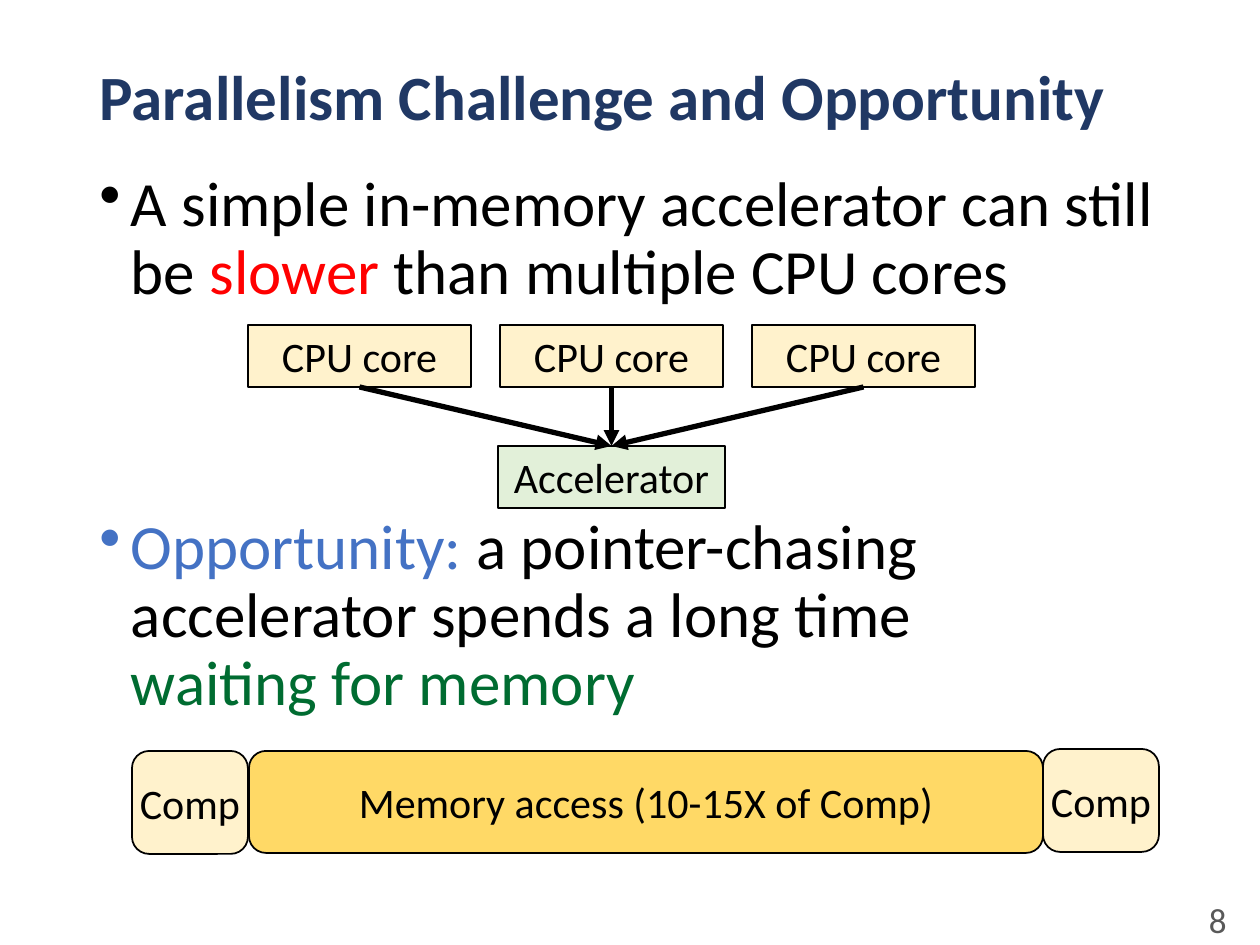
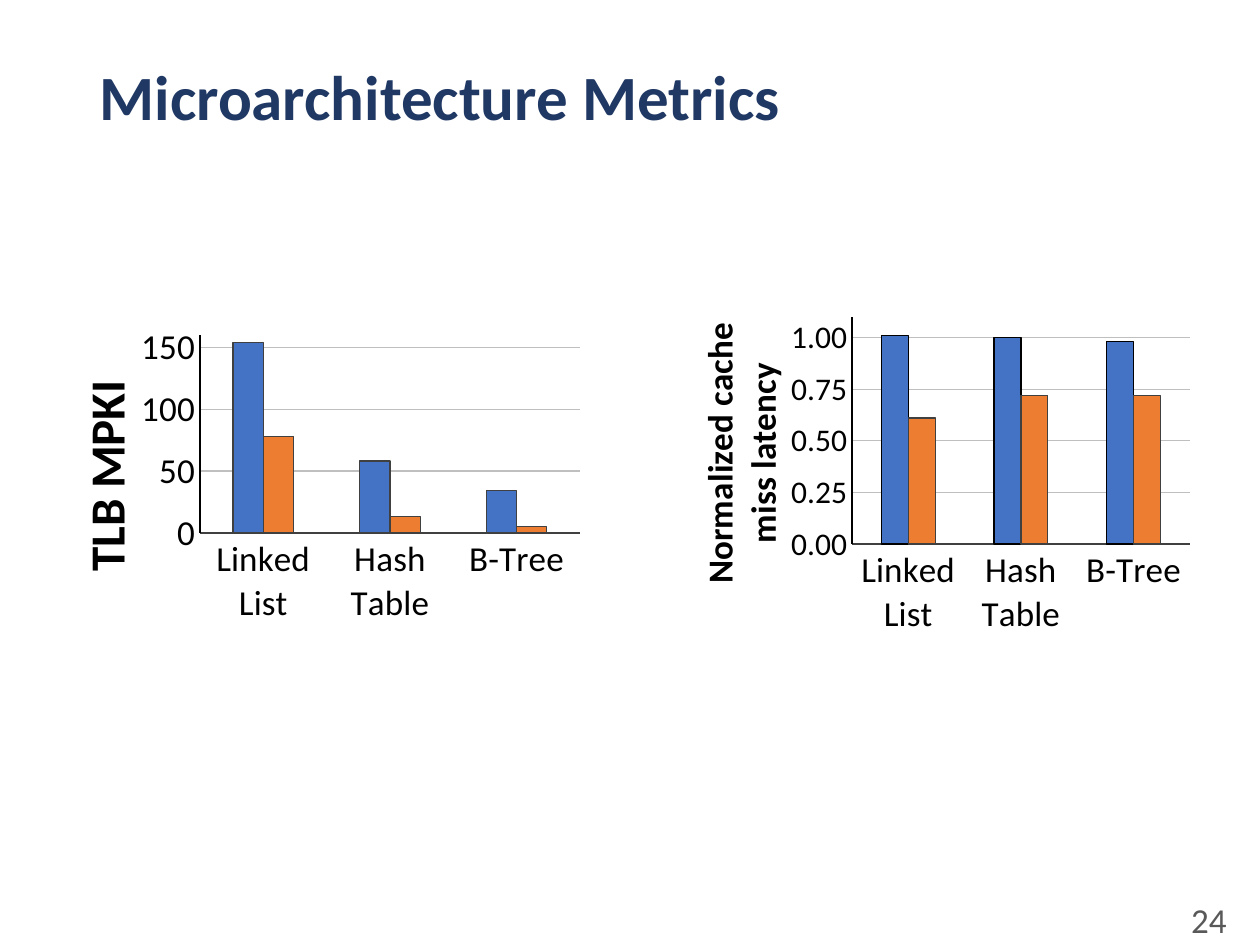
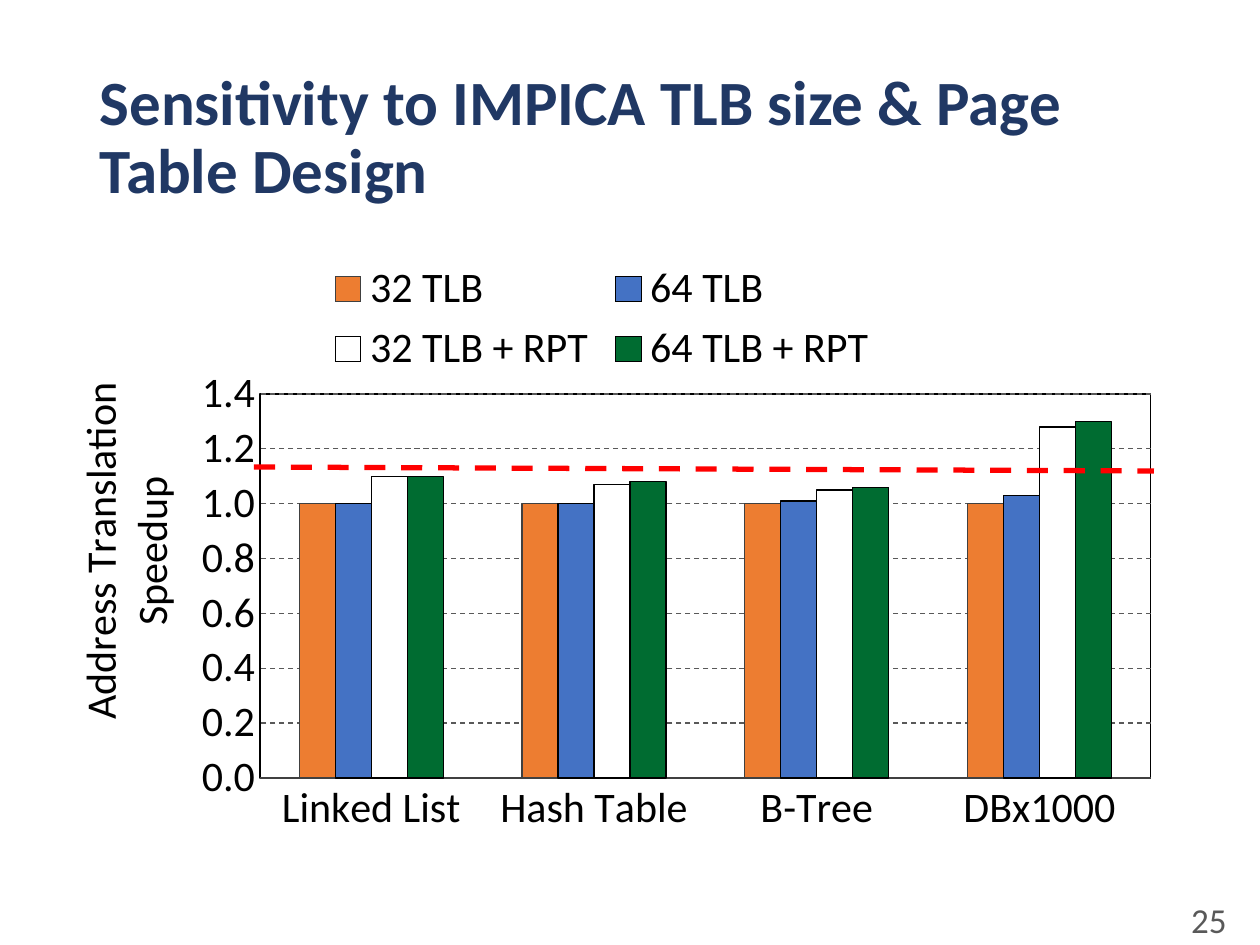
from pptx import Presentation
from pptx.chart.data import CategoryChartData
from pptx.dml.color import RGBColor
from pptx.enum.chart import XL_CHART_TYPE, XL_LEGEND_POSITION, XL_TICK_MARK
from pptx.enum.dml import MSO_LINE
from pptx.enum.shapes import MSO_CONNECTOR, MSO_SHAPE
from pptx.enum.text import MSO_ANCHOR, MSO_AUTO_SIZE, PP_ALIGN
from pptx.oxml import parse_xml
from pptx.oxml.ns import nsdecls, qn
from pptx.oxml.xmlchemy import OxmlElement
from pptx.util import Emu, Pt

RECTANGLE, ROUNDED = MSO_SHAPE.RECTANGLE, MSO_SHAPE.ROUNDED_RECTANGLE
STRAIGHT = MSO_CONNECTOR.STRAIGHT
LEFT, CENTER, RIGHT = PP_ALIGN.LEFT, PP_ALIGN.CENTER, PP_ALIGN.RIGHT
TOP, MIDDLE = MSO_ANCHOR.TOP, MSO_ANCHOR.MIDDLE
NO_AUTOFIT = MSO_AUTO_SIZE.NONE
DASH = MSO_LINE.DASH
COLUMNS = XL_CHART_TYPE.COLUMN_CLUSTERED
LEGEND_TOP = XL_LEGEND_POSITION.TOP
NO_TICK = XL_TICK_MARK.NONE

EMU_PER_PX = 914400 / 126
SLIDE_WIDTH, SLIDE_HEIGHT = 1260, 945
TITLE_LAYOUT = 5
FONT = "Calibri"
BLACK, WHITE, RED = "000000", "FFFFFF", "FF0000"
NAVY, BLUE, ORANGE, GREEN = "203864", "4472C4", "ED7D31", "006C31"
CREAM, GOLD, MINT = "FFF2CC", "FFD966", "E2F0D9"
DARK_GRAY, GRAY, LIGHT_GRAY = "404040", "595959", "BFBFBF"
STRUCTURES = ["Linked List", "Hash Table", "B-Tree"]
BOTTOM_SITE, TOP_SITE = 2, 0


def px(length):
    return Emu(round(length * EMU_PER_PX))


def place(left, top, width, height):
    return px(left), px(top), px(width), px(height)


def rgb(value):
    return RGBColor.from_string(value)


def style_font(font, size, color=BLACK, bold=False):
    font.name = FONT
    font.size = Pt(size)
    font.bold = bold
    font.color.rgb = rgb(color)


def style_line(line, color, width=0.75, dash=None):
    line.color.rgb = rgb(color)
    line.width = Pt(width)
    if dash is not None:
        line.dash_style = dash


def write(paragraph, text, size=24, color=BLACK, bold=False, align=LEFT,
          spacing=None, before=0, bullet=False):
    paragraph.alignment = align
    paragraph.space_before = Pt(before)
    if spacing:
        paragraph.line_spacing = spacing
    if bullet:
        properties = paragraph._p.get_or_add_pPr()
        properties.set("marL", "228600")
        properties.set("indent", "-228600")
        mark = OxmlElement("a:buChar")
        mark.set("char", "•")
        properties.append(mark)
    pieces = [(text, color)] if isinstance(text, str) else text
    for words, run_color in pieces:
        if words == "\n":
            paragraph.add_line_break()
            continue
        run = paragraph.add_run()
        run.text = words
        style_font(run.font, size, run_color, bold)


def prepare_frame(shape, anchor=MIDDLE):
    frame = shape.text_frame
    frame.word_wrap = True
    frame.auto_size = NO_AUTOFIT
    frame.vertical_anchor = anchor
    return frame


def add_slide(presentation, title, number, title_width=1086, title_height=100):
    slide = presentation.slides.add_slide(presentation.slide_layouts[TITLE_LAYOUT])
    heading = slide.shapes.title
    heading.left, heading.top, heading.width, heading.height = place(
        87, 50, title_width, title_height)
    write(prepare_frame(heading).paragraphs[0], title, size=36, color=NAVY,
          bold=True, spacing=0.9)
    footer = slide.shapes.add_textbox(*place(955, 895, 284, 50))
    write(prepare_frame(footer).paragraphs[0], str(number), size=20,
          color=GRAY, align=RIGHT)
    return slide


def add_bullets(slide, box, bullets):
    frame = prepare_frame(slide.shapes.add_textbox(*place(*box)), TOP)
    for index, (pieces, before) in enumerate(bullets):
        paragraph = frame.add_paragraph() if index else frame.paragraphs[0]
        write(paragraph, pieces, size=36, spacing=0.9, before=before, bullet=True)


def add_box(slide, kind, box, text, fill, side_inset=13):
    shape = slide.shapes.add_shape(kind, *place(*box))
    shape.shadow.inherit = False
    shape.fill.solid()
    shape.fill.fore_color.rgb = rgb(fill)
    style_line(shape.line, BLACK, 1)
    frame = prepare_frame(shape)
    frame.margin_left = frame.margin_right = px(side_inset)
    write(frame.paragraphs[0], text, align=CENTER)
    return shape


def add_line(slide, start, end, color, dash=None):
    connector = slide.shapes.add_connector(
        STRAIGHT, *(px(value) for value in (*start, *end)))
    style_line(connector.line, color, 3, dash)
    connector._element.spPr.append(OxmlElement("a:effectLst"))
    return connector


def add_arrow(slide, source, target):
    connector = add_line(slide, (0, 0), (0, 0), BLACK)
    connector.begin_connect(source, BOTTOM_SITE)
    connector.end_connect(target, TOP_SITE)
    tail = OxmlElement("a:tailEnd")
    tail.set("type", "triangle")
    connector.line._get_or_add_ln().append(tail)


def manual_layout(parent, box, position, inner=False):
    for old_layout in parent.findall(qn("c:layout")):
        parent.remove(old_layout)
    left, top, width, height = box
    values = [("xMode", "edge"), ("yMode", "edge"),
              ("x", (position[0] - left) / width),
              ("y", (position[1] - top) / height)]
    if inner:
        values.insert(0, ("layoutTarget", "inner"))
        values += [("w", position[2] / width), ("h", position[3] / height)]
    layout = OxmlElement("c:layout")
    manual = OxmlElement("c:manualLayout")
    layout.append(manual)
    for name, value in values:
        item = OxmlElement(f"c:{name}")
        item.set("val", value if isinstance(value, str) else f"{value:.4f}")
        manual.append(item)
    text = parent.find(qn("c:tx"))
    if text is None:
        parent.insert(0, layout)
    else:
        text.addnext(layout)


def style_value_axis(axis, maximum, step, number_format, size, grid, dash):
    axis.minimum_scale, axis.maximum_scale, axis.major_unit = 0, maximum, step
    axis.tick_labels.number_format = number_format
    axis.tick_labels.number_format_is_linked = False
    style_font(axis.tick_labels.font, size)
    axis.has_major_gridlines = True
    style_line(axis.major_gridlines.format.line, grid, dash=dash)


def title_axis(axis, text, size, bold, box, position):
    title = axis.axis_title
    write(title.text_frame.paragraphs[0], text, size=size, bold=bold, align=CENTER)
    body = title._element.find(f".//{qn('a:bodyPr')}")
    body.set("rot", "-5400000")
    body.set("vert", "horz")
    manual_layout(title._element, box, position)


def add_columns(slide, box, plot_box, categories, series, axis_text, axis_position,
                maximum, step, number_format, text_size=20, value_size=20,
                title_size=20, title_bold=True, grid=LIGHT_GRAY, dash=None,
                framed=False):
    data = CategoryChartData(number_format=number_format)
    data.categories = categories
    for name, values, _, _ in series:
        data.add_series(name, values)
    chart = slide.shapes.add_chart(COLUMNS, *place(*box), data).chart
    chart.has_title = False
    style_font(chart.font, 14)
    plot = chart.plots[0]
    plot.gap_width, plot.overlap, plot.vary_by_categories = 219, 0, False
    for column, (_, _, fill, outline) in zip(plot.series, series):
        column.format.fill.solid()
        column.format.fill.fore_color.rgb = rgb(fill)
        style_line(column.format.line, outline)
    for axis, color in ((chart.category_axis, DARK_GRAY), (chart.value_axis, BLACK)):
        axis.major_tick_mark = axis.minor_tick_mark = NO_TICK
        style_line(axis.format.line, color)
    style_font(chart.category_axis.tick_labels.font, text_size)
    style_value_axis(chart.value_axis, maximum, step, number_format, value_size,
                     grid, dash)
    title_axis(chart.value_axis, axis_text, title_size, title_bold, box, axis_position)
    plot_area = chart._chartSpace.chart.plotArea
    manual_layout(plot_area, box, plot_box, inner=True)
    chart.has_legend = framed
    if framed:
        chart.value_axis.format.line.fill.background()
        chart.legend.position = LEGEND_TOP
        chart.legend.include_in_layout = False
        style_font(chart.legend.font, text_size)
        plot_area.append(parse_xml(
            f'<c:spPr {nsdecls("c", "a")}><a:noFill/><a:ln w="9525"><a:solidFill>'
            f'<a:srgbClr val="{BLACK}"/></a:solidFill></a:ln></c:spPr>'))


def build_parallelism(presentation):
    slide = add_slide(presentation, "Parallelism Challenge and Opportunity", 8,
                      title_width=1173)
    add_bullets(slide, (87, 166, 1086, 738), [
        ([("A simple in-memory accelerator can still be ", BLACK), ("slower", RED),
          (" than multiple CPU cores", BLACK)], 10),
        ([("Opportunity: ", BLUE),
          ("a pointer-chasing accelerator spends a long time", BLACK),
          ("\n", BLACK), ("waiting for memory", GREEN)], 118),
    ])
    cores = [add_box(slide, RECTANGLE, (248 + 252 * index, 325, 223, 62),
                     "CPU core", CREAM) for index in range(3)]
    accelerator = add_box(slide, RECTANGLE, (498, 446, 227, 62), "Accelerator", MINT)
    for core in cores:
        add_arrow(slide, core, accelerator)
    for left, top in ((132, 751), (1043, 749)):
        add_box(slide, ROUNDED, (left, top, 116, 103), "Comp", CREAM, side_inset=0)
    add_box(slide, ROUNDED, (249, 751, 794, 102), "Memory access (10-15X of Comp)", GOLD)


def build_metrics(presentation):
    slide = add_slide(presentation, "Microarchitecture Metrics", 24)
    add_columns(slide, (24, 314, 566, 344), (200, 335, 380, 198), STRUCTURES,
                [("Series 1", (154, 58, 34), BLUE, DARK_GRAY),
                 ("Series 2", (78, 13, 5), ORANGE, DARK_GRAY)],
                "TLB MPKI", (64, 372), 160, 50, "0", title_size=28)
    add_columns(slide, (665, 241, 556, 417), (852, 317, 338, 227), STRUCTURES,
                [("Series 1", (1.01, 1, 0.98), BLUE, BLACK),
                 ("Series 2", (0.61, 0.72, 0.72), ORANGE, DARK_GRAY)],
                "Normalized cache miss latency", (688, 316), 1.1, 0.25, "0.00",
                value_size=18)


def build_sensitivity(presentation):
    slide = add_slide(presentation, "Sensitivity to IMPICA TLB size & Page Table Design",
                      25, title_height=178)
    add_columns(slide, (30, 246, 1144, 600), (260, 394, 891, 384),
                STRUCTURES + ["DBx1000"],
                [("32 TLB", (1, 1, 1, 1), ORANGE, DARK_GRAY),
                 ("64 TLB", (1, 1, 1.01, 1.03), BLUE, BLACK),
                 ("32 TLB + RPT", (1.1, 1.07, 1.05, 1.28), WHITE, BLACK),
                 ("64 TLB + RPT", (1.1, 1.08, 1.06, 1.3), GREEN, BLACK)],
                "Address Translation Speedup", (64, 375), 1.4, 0.2, "0.0",
                text_size=24, value_size=24, title_size=24, title_bold=False,
                grid=GRAY, dash=DASH, framed=True)
    add_line(slide, (254, 467), (1154, 471), RED, DASH)


def main():
    presentation = Presentation()
    presentation.slide_width = px(SLIDE_WIDTH)
    presentation.slide_height = px(SLIDE_HEIGHT)
    build_parallelism(presentation)
    build_metrics(presentation)
    build_sensitivity(presentation)
    presentation.save("out.pptx")


if __name__ == "__main__":
    main()
